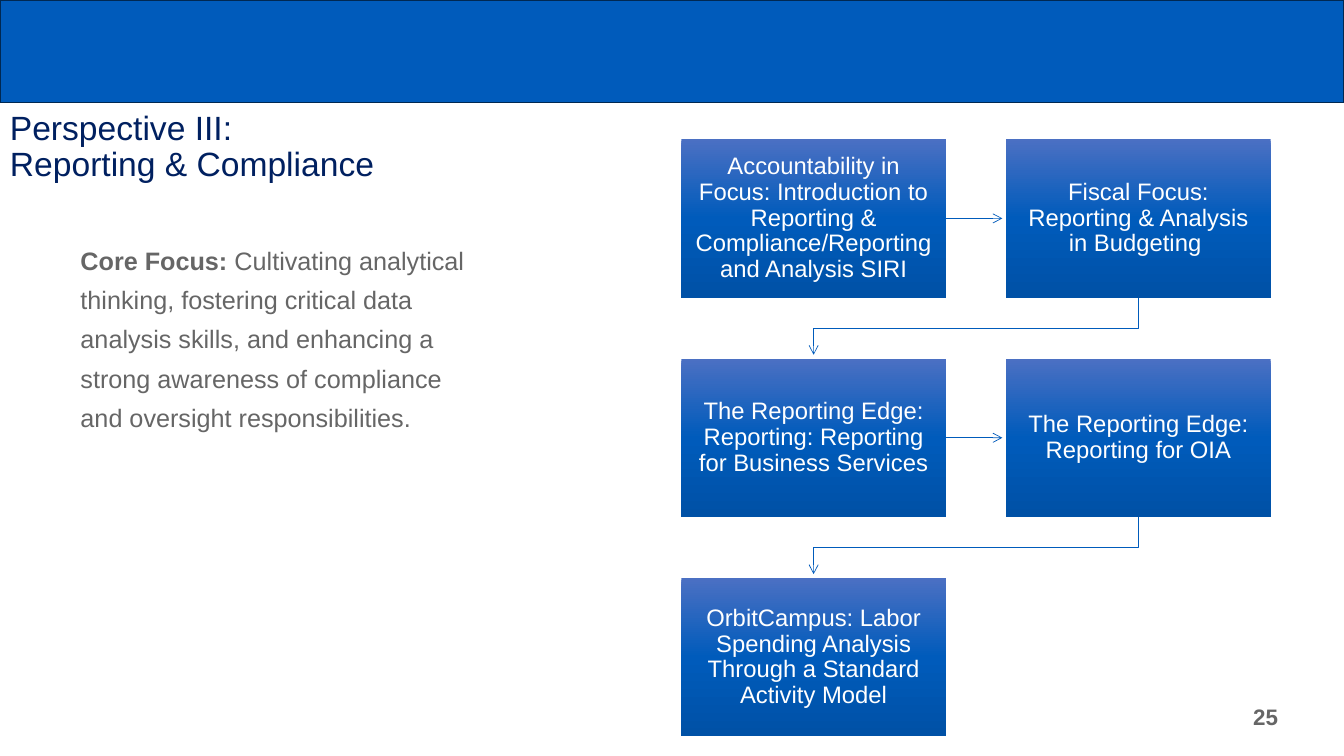
from copy import deepcopy

from pptx import Presentation
from pptx.dml.color import RGBColor
from pptx.enum.shapes import MSO_CONNECTOR, MSO_SHAPE
from pptx.enum.text import MSO_ANCHOR, PP_ALIGN
from pptx.oxml.ns import qn
from pptx.oxml.xmlchemy import OxmlElement
from pptx.util import Pt

COLORS = {
    "blue": "005BBB",
    "header_line": "002852",
    "title": "002060",
    "gray": "666666",
    "white": "FFFFFF",
    "box_top": "4B70C3",
    "box_bottom": "0051A6",
}
FONT = "Arial"

# Course grid: filled row by row
LEFT, TOP = 486.7, 99.4
BOX_W, BOX_H = 189, 113.2
STEP_X, STEP_Y = 232, 156.7
COLUMNS = 2
ARROW_GAP = 2.7
COURSES = [
    "Accountability in Focus: Introduction to Reporting & "
    "Compliance/Reporting and Analysis SIRI",
    "Fiscal Focus: Reporting & Analysis in Budgeting ",
    "The Reporting Edge: Reporting: Reporting for Business Services",
    "The Reporting Edge: Reporting for OIA",
    "OrbitCampus: Labor Spending Analysis Through a Standard Activity Model",
]


def rgb(name):
    return RGBColor.from_string(COLORS[name])


def add_run(p, text, size, color, bold=False):
    r = p.add_run()
    r.text = text
    r.font.name = FONT
    r.font.size = Pt(size)
    r.font.bold = bold
    r.font.color.rgb = rgb(color)


def add_text_box(slide, x, y, w, h, anchor=MSO_ANCHOR.TOP):
    tf = slide.shapes.add_textbox(Pt(x), Pt(y), Pt(w), Pt(h)).text_frame
    tf.word_wrap = True
    tf.vertical_anchor = anchor
    return tf


def add_rect(slide, x, y, w, h):
    s = slide.shapes.add_shape(MSO_SHAPE.RECTANGLE, Pt(x), Pt(y), Pt(w), Pt(h))
    s.shadow.inherit = False
    return s


def fill_gradient(s):
    s.fill.gradient()
    s.fill.gradient_angle = 270
    stop_list = s.fill.gradient_stops[0]._gs.getparent()
    stop_list.append(deepcopy(stop_list[-1]))
    stops = zip(s.fill.gradient_stops, (0, 0.5, 1),
                ("box_top", "blue", "box_bottom"))
    for stop, position, color in stops:
        stop.position = position
        stop.color.rgb = rgb(color)


def add_course(slide, x, y, text):
    s = add_rect(slide, x, y, BOX_W, BOX_H)
    fill_gradient(s)
    s.line.fill.background()
    tf = s.text_frame
    tf.word_wrap = True
    tf.vertical_anchor = MSO_ANCHOR.MIDDLE
    tf.margin_left = tf.margin_right = Pt(9.4)
    tf.margin_top = tf.margin_bottom = Pt(9.4)
    p = tf.paragraphs[0]
    p.alignment = PP_ALIGN.CENTER
    p.line_spacing = 0.9
    add_run(p, text, 17, "white")
    return s


def style_arrow(s):
    s.line.color.rgb = rgb("blue")
    s.line.width = Pt(0.5)
    tail = OxmlElement("a:tailEnd")
    tail.set("type", "arrow")
    s.line._get_or_add_ln().append(tail)


def add_row_arrow(slide, box, x, y):
    mid = Pt(y + BOX_H / 2)
    s = slide.shapes.add_connector(
        MSO_CONNECTOR.STRAIGHT, Pt(x + BOX_W), mid,
        Pt(x + STEP_X - ARROW_GAP), mid)
    s.begin_connect(box, 3)
    style_arrow(s)
    s._element.spPr.append(OxmlElement("a:effectLst"))


def add_return_arrow(slide, x, y):
    start_x, end_x = x + BOX_W / 2, LEFT + BOX_W / 2
    start_y, end_y = y + BOX_H, y + STEP_Y - ARROW_GAP
    turn_y = y + (BOX_H + STEP_Y) / 2
    builder = slide.shapes.build_freeform(Pt(start_x), Pt(start_y))
    builder.add_line_segments(
        [(Pt(start_x), Pt(turn_y)), (Pt(end_x), Pt(turn_y)),
         (Pt(end_x), Pt(end_y))], close=False)
    s = builder.convert_to_shape()
    s.shadow.inherit = False
    s.fill.background()
    style_arrow(s)


def add_course_flow(slide):
    for i, text in enumerate(COURSES):
        row, col = divmod(i, COLUMNS)
        x, y = LEFT + col * STEP_X, TOP + row * STEP_Y
        box = add_course(slide, x, y, text)
        if i == len(COURSES) - 1:
            continue
        if col < COLUMNS - 1:
            add_row_arrow(slide, box, x, y)
        else:
            add_return_arrow(slide, x, y)


def add_title(slide):
    tf = add_text_box(slide, 0, 73.4, 547, 98.6)
    tf.margin_top = Pt(6)
    p = tf.paragraphs[0]
    p.line_spacing = 0.9
    add_run(p, "Perspective III: ", 24, "title")
    p.add_line_break()
    add_run(p, "Reporting & Compliance", 24, "title")


def add_core_focus(slide):
    p = add_text_box(slide, 50.4, 165, 300, 312.5).paragraphs[0]
    p.line_spacing = 1.3
    add_run(p, "Core Focus:", 18, "gray", bold=True)
    add_run(p, " Cultivating analytical thinking, fostering critical data "
               "analysis skills, and enhancing a strong awareness of "
               "compliance and oversight responsibilities.", 18, "gray")


def add_page_number(slide):
    tf = add_text_box(slide, 596, 497.5, 324, 28.8, MSO_ANCHOR.MIDDLE)
    p = tf.paragraphs[0]
    p.alignment = PP_ALIGN.RIGHT
    add_run(p, "25", 16, "gray", bold=True)


def main():
    prs = Presentation()
    prs.slide_width, prs.slide_height = Pt(960), Pt(540)
    slide = prs.slides.add_slide(prs.slide_layouts[6])

    # Header band
    band = add_rect(slide, 0, 0, 960, 73.4)
    band.fill.solid()
    band.fill.fore_color.rgb = rgb("blue")
    band.line.color.rgb = rgb("header_line")
    band.line.width = Pt(1)

    # Text on the left, course flow on the right
    add_title(slide)
    add_core_focus(slide)
    add_page_number(slide)
    add_course_flow(slide)
    prs.save("out.pptx")


if __name__ == "__main__":
    main()
